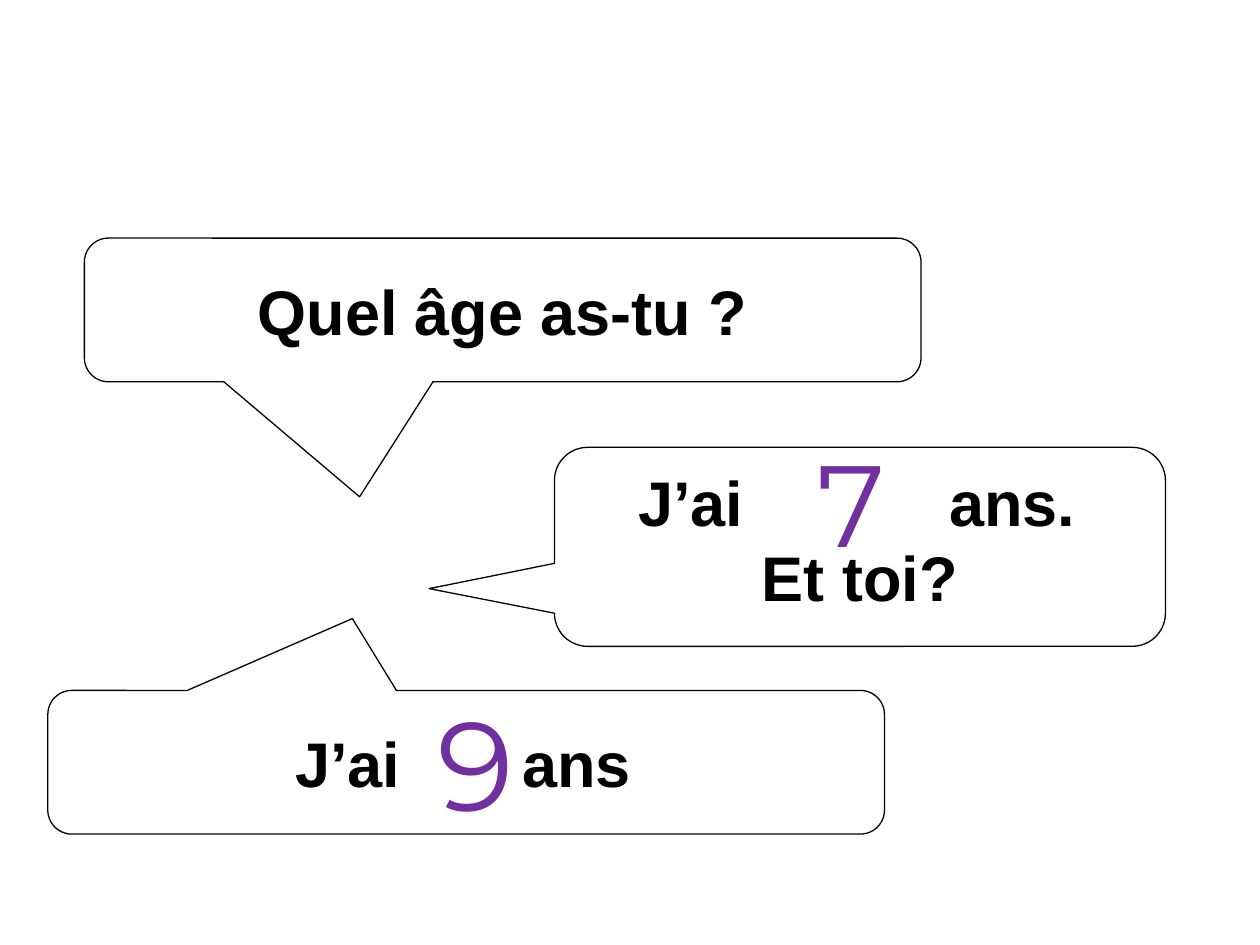
"""Build a French dialogue slide about asking and telling one's age."""
from lxml.etree import SubElement
from pptx import Presentation
from pptx.dml.color import RGBColor
from pptx.enum.shapes import MSO_SHAPE
from pptx.enum.text import MSO_ANCHOR, MSO_AUTO_SIZE, PP_ALIGN
from pptx.oxml.ns import qn
from pptx.util import Inches, Pt

BLACK = RGBColor(0, 0, 0)
WHITE = RGBColor(255, 255, 255)
PURPLE = RGBColor(0x70, 0x30, 0xA0)
CORNER = 0.167

BUBBLES = [
    {"box": (0.67, 1.89, 6.64, 1.14), "tip": (-0.171, 1.301),
     "lines": ["Quel âge as-tu ?"]},
    {"box": (4.4, 3.55, 4.85, 1.58), "tip": (-0.705, 0.21),
     "lines": ["\tJ’ai\tans.", "Et toi?"], "stops": (0.49, 2.96),
     "anchor": MSO_ANCHOR.TOP},
    {"box": (0.38, 5.48, 6.64, 1.14), "tip": (-0.136, -1),
     "lines": ["\tJ’ai\tans"], "stops": (1.81, 3.61)},
]
AGES = [
    {"text": "7", "box": (6.35, 3.38, 0.82, 1.21), "size": 66},
    {"text": "9", "box": (3.34, 5.39, 0.88, 1.31), "size": 72},
]


def write(paragraph, text, size=36, font="Arial", color=BLACK, bold=False, stops=()):
    """Write text centred, or placed on tab stops where it holds tabs."""
    tabbed = "\t" in text
    paragraph.alignment = PP_ALIGN.LEFT if tabbed else PP_ALIGN.CENTER
    if tabbed:
        tabs = SubElement(paragraph._p.get_or_add_pPr(), qn("a:tabLst"))
        for stop in stops:
            SubElement(tabs, qn("a:tab"), pos=str(Inches(stop)), algn="l")
    run = paragraph.add_run()
    run.text = text
    run.font.size = Pt(size)
    run.font.name = font
    run.font.bold = bold
    run.font.color.rgb = color


def add_bubble(slide, box, tip, lines, stops=(), anchor=MSO_ANCHOR.MIDDLE):
    """Add a speech bubble whose tail points to tip."""
    bubble = slide.shapes.add_shape(
        MSO_SHAPE.ROUNDED_RECTANGULAR_CALLOUT, *map(Inches, box))
    for index, value in enumerate((*tip, CORNER)):
        bubble.adjustments[index] = value
    bubble.shadow.inherit = False
    bubble.fill.solid()
    bubble.fill.fore_color.rgb = WHITE
    bubble.line.color.rgb = BLACK
    bubble.line.width = Pt(0.75)
    frame = bubble.text_frame
    frame.word_wrap = True
    frame.vertical_anchor = anchor
    for index, line in enumerate(lines):
        paragraph = frame.add_paragraph() if index else frame.paragraphs[0]
        write(paragraph, line, bold=True, stops=stops)


def add_age(slide, text, box, size):
    """Add a large age figure over a bubble."""
    frame = slide.shapes.add_textbox(*map(Inches, box)).text_frame
    frame.word_wrap = False
    frame.auto_size = MSO_AUTO_SIZE.SHAPE_TO_FIT_TEXT
    write(frame.paragraphs[0], text, size=size, font="Montserrat", color=PURPLE)


def main():
    """Assemble and save the slide."""
    deck = Presentation()
    deck.slide_width, deck.slide_height = Inches(10), Inches(7.5)
    slide = deck.slides.add_slide(deck.slide_layouts[6])
    for bubble in BUBBLES:
        add_bubble(slide, **bubble)
    for age in AGES:
        add_age(slide, **age)
    deck.save("out.pptx")


if __name__ == "__main__":
    main()
